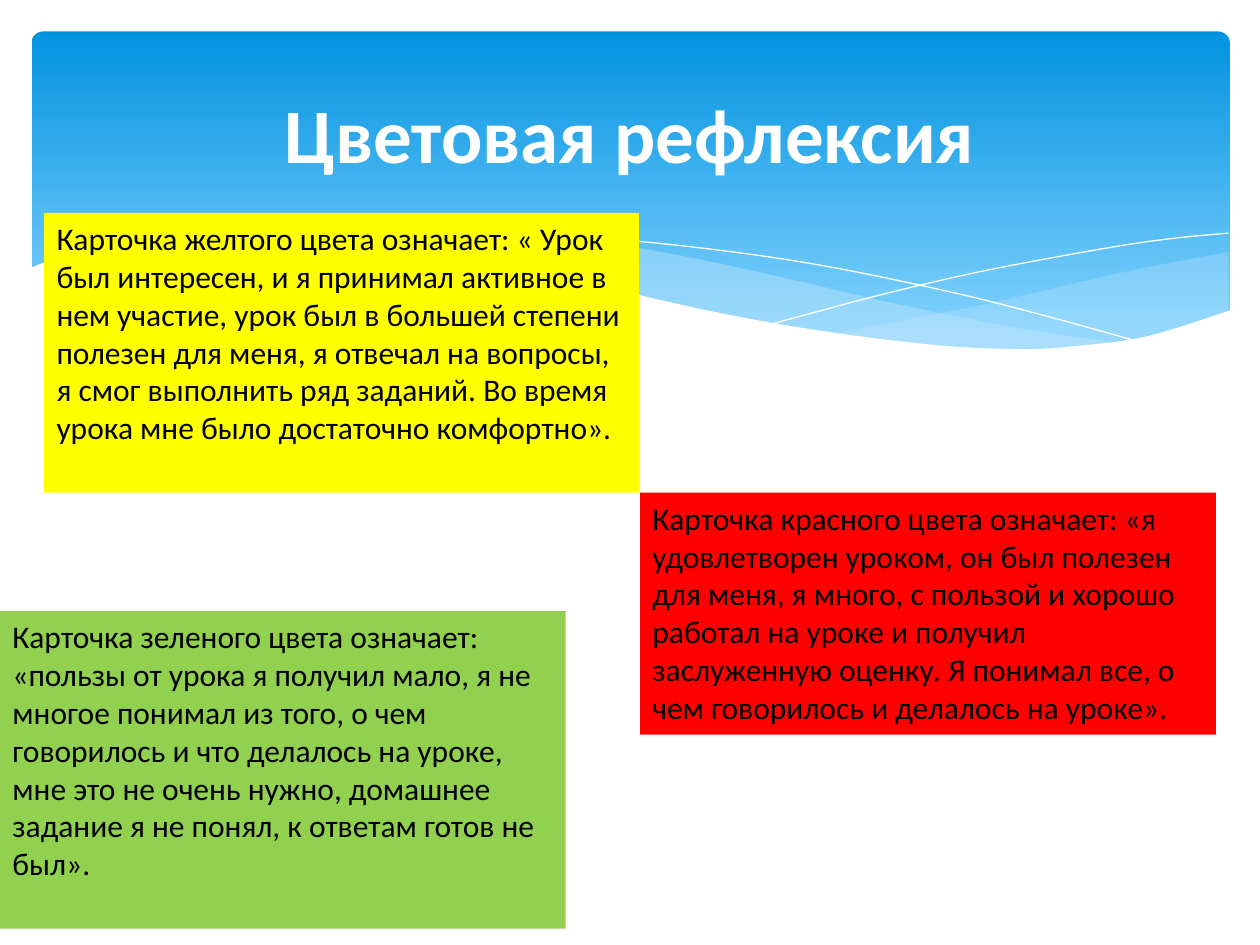
from lxml import etree
from pptx import Presentation
from pptx import util as u
from pptx.dml.color import RGBColor
from pptx.enum import shapes, text
from pptx.oxml.ns import qn

COLORS = {
    "sky": "0293E0", "sky_light": "83D3FE", "wave": "C6E7FC", "white": "FFFFFF",
    "black": "000000", "red": "FF0000", "yellow": "FFFF00", "green": "92D050",
}
TITLE_FONT = {"name": "Calibri", "size": u.Pt(44), "bold": True}
CARD_FONT = {"name": "Calibri", "size": u.Pt(18)}

# Wave knots in inches from the corner of the wave box
WHITE_EDGE = [(9.54, .62), (8.87, .83), (8.27, .91), (7.86, .93), (7.21, .9),
              (6.25, .78), (5.32, .61), (4.24, .36), (3.17, .13), (2.27, .02),
              (1.54, 0), (.96, .03), (.44, .13), (0, .29)]
RIGHT_TOP = [(9.52, .16), (8.83, .29), (8.38, .39), (7.56, .58), (6.38, .81)]
RIGHT_BOTTOM = [(6.38, .81), (7.09, .9), (7.8, .94), (8.31, .92), (8.82, .85),
                (9.26, .73), (9.52, .63)]
MIDDLE_TOP = [(8.7, .89), (7.84, .76), (6.83, .56), (6.06, .38), (5.18, .19),
              (4.42, .07), (3.57, .01), (2.63, .07)]
MIDDLE_BOTTOM = [(2.63, .07), (3.39, .19), (4.26, .38), (5.43, .64), (6.42, .82),
                 (7.25, .92), (7.95, .94), (8.7, .89)]
FALLING_LINE = [(2.86, .11), (3.3, .05), (3.93, .03), (4.66, .06), (5.59, .16),
                (6.42, .29), (7.37, .49), (8.08, .67), (8.84, .88)]
RISING_LINE = [(5.9, .73), (6.72, .51), (7.53, .32), (8.43, .15), (9.01, .06),
               (9.52, .01)]

# Cards from back to front: colour, box, wording
CARDS = [
    ("red", (5.08, 3.91, 4.57, 1.92),
     "Карточка красного цвета означает: «я удовлетворен уроком, он был полезен "
     "для меня, я много, с пользой и хорошо работал на уроке и получил "
     "заслуженную оценку. Я понимал все, о чем говорилось и делалось на уроке»."),
    ("yellow", (0.35, 1.69, 4.72, 2.22),
     "Карточка желтого цвета означает: « Урок был интересен, и я принимал "
     "активное в нем участие, урок был в большей степени полезен для меня, я "
     "отвечал на вопросы, я смог выполнить ряд заданий. Во время урока мне было "
     "достаточно комфортно»."),
    ("green", (0, 4.85, 4.49, 2.52),
     "Карточка зеленого цвета означает: «пользы от урока я получил мало, я не "
     "многое понимал из того, о чем говорилось и что делалось на уроке, мне это "
     "не очень нужно, домашнее задание я не понял, к ответам готов не был»."),
]


def rgb(color):
    return RGBColor.from_string(COLORS[color])


def smooth(knots, steps=5):
    """Points of a Catmull-Rom curve through the knots."""
    padded = [knots[0], *knots, knots[-1]]
    points = [knots[0]]
    for a, b, c, d in zip(padded, padded[1:], padded[2:], padded[3:]):
        for step in range(1, steps + 1):
            t = step / steps
            points.append(tuple(
                (2 * q + (r - p) * t + (2 * p - 5 * q + 4 * r - s) * t ** 2
                 + (3 * q - p - 3 * r + s) * t ** 3) / 2
                for p, q, r, s in zip(a, b, c, d)))
    return points


def add_outline(slide, box, points, closed):
    left, top = box[:2]
    placed = [(u.Inches(left + x), u.Inches(top + y)) for x, y in points]
    builder = slide.shapes.build_freeform(*placed[0], scale=1.0)
    builder.add_line_segments(placed[1:], close=closed)
    outline = builder.convert_to_shape()
    outline.shadow.inherit = False
    return outline


def add_wave(slide, box, points, color, opacity=100):
    wave = add_outline(slide, box, points, True)
    wave.line.fill.background()
    wave.fill.solid()
    wave.fill.fore_color.rgb = rgb(color)
    if opacity < 100:
        tint = wave.fill._xPr.find(qn("a:solidFill"))[0]
        etree.SubElement(tint, qn("a:alpha"), val=str(opacity * 1000))


def add_hairline(slide, box, knots):
    hairline = add_outline(slide, box, smooth(knots), False)
    hairline.fill.background()
    hairline.line.color.rgb = rgb("white")
    hairline.line.width = u.Pt(0)


def add_banner(slide, box):
    banner = slide.shapes.add_shape(shapes.MSO_SHAPE.ROUNDED_RECTANGLE, *map(u.Inches, box))
    banner.adjustments[0] = 0.034
    banner.shadow.inherit = False
    banner.line.fill.background()
    banner.fill.gradient()
    banner.fill.gradient_angle = 270
    stops = zip(banner.fill.gradient_stops, ("sky", "sky_light"), (0, 0.9))
    for stop, color, position in stops:
        stop.color.rgb = rgb(color)
        stop.position = position


def add_waves(slide, box):
    width, height = box[2:]
    add_wave(slide, box, smooth(RIGHT_TOP) + smooth(RIGHT_BOTTOM), "wave", 29)
    add_wave(slide, box, smooth(MIDDLE_TOP) + smooth(MIDDLE_BOTTOM), "wave", 40)
    for knots in (FALLING_LINE, RISING_LINE):
        add_hairline(slide, box, knots)
    add_wave(slide, box, smooth(WHITE_EDGE) + [(0, height), (width, height)], "white")


def write(frame, wording, font_format, color, anchor, align):
    frame.word_wrap = True
    frame.vertical_anchor = anchor
    paragraph = frame.paragraphs[0]
    paragraph.alignment = align
    run = paragraph.add_run()
    run.text = wording
    for attribute, value in font_format.items():
        setattr(run.font, attribute, value)
    run.font.color.rgb = rgb(color)


def add_title(slide, box, wording):
    title = slide.shapes.add_textbox(*map(u.Inches, box))
    write(title.text_frame, wording, TITLE_FONT, "white",
          text.MSO_ANCHOR.MIDDLE, text.PP_ALIGN.CENTER)


def add_card(slide, box, color, wording):
    card = slide.shapes.add_shape(shapes.MSO_SHAPE.RECTANGLE, *map(u.Inches, box))
    card.shadow.inherit = False
    card.line.fill.background()
    card.fill.solid()
    card.fill.fore_color.rgb = rgb(color)
    write(card.text_frame, wording, CARD_FONT, "black",
          text.MSO_ANCHOR.TOP, text.PP_ALIGN.LEFT)


def main():
    deck = Presentation()
    deck.slide_width, deck.slide_height = u.Inches(10), u.Inches(7.5)
    slide = deck.slides.add_slide(deck.slide_layouts[6])

    # Header
    add_banner(slide, (0.25, 0.25, 9.51, 2.7))
    add_waves(slide, (0.23, 1.84, 9.54, 1.45))
    add_title(slide, (0.5, 0.37, 9, 1.37), "Цветовая рефлексия")

    # Cards
    for color, box, wording in CARDS:
        add_card(slide, box, color, wording)

    deck.save("out.pptx")


if __name__ == "__main__":
    main()
